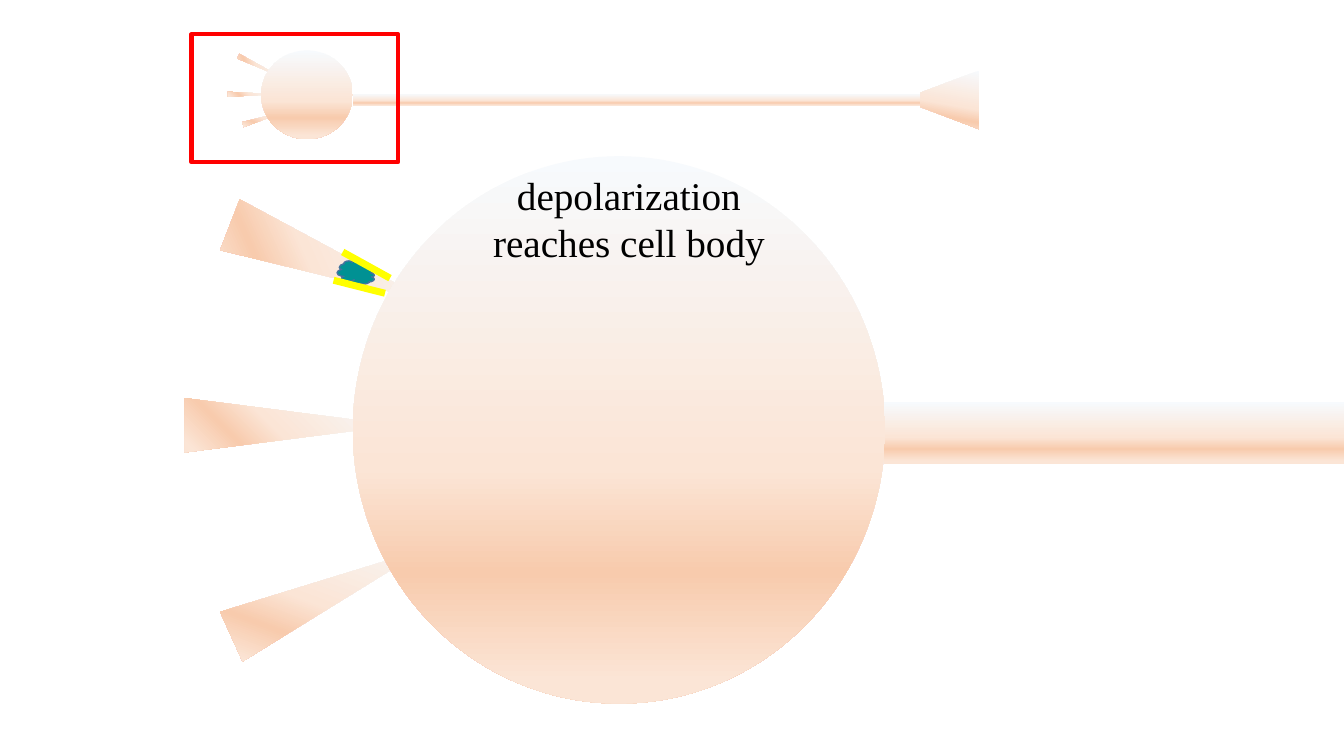
import pptx
import pptx.util
import pptx.dml.color
import pptx.enum.shapes
import pptx.enum.text
import pptx.oxml.ns
from lxml import etree

Pt = pptx.util.Pt
KIND = pptx.enum.shapes.MSO_SHAPE
qn = pptx.oxml.ns.qn

SIZE = 960, 540
LABEL = ["depolarization", "reaches cell body"]
LABEL_BOX = 267.1, 118.8, 364.3, 74.9
LABEL_FONT = {"name": "Times New Roman", "size": Pt(28)}
STOPS = [(0, "F7FAFD"), (57, "FBE5D6"), (76, "F8CBAD"), (96, "FBE5D6")]

# Dendrites: left, top, turn
LARGE = 38.9, 152.6
LARGE_DENDRITES = [(216, 111.6, 111), (188.6, 227.5, 90), (215.3, 347, 65.6)]
SMALL = 3.6, 35.3
SMALL_DENDRITES = [(184.3, 30.2, 116), (178.6, 49.7, 90), (188.6, 66.2, 73)]

LARGE_AXON = 607, 287.3, 353, 43.9
SMALL_AXON = 252, 67, 406.1, 8.6
LARGE_BODY = 252, 111.6, 380.2, 391
SMALL_BODY = 186.5, 36, 65.5, 63.4
TERMINAL = 657.4, 50.4, 41.8, 41.8
FRAME = 136.8, 24.5, 147.6, 91.4
CHANNEL = 245.5, 181.4, 17.3, 26.6
WALLS = [(244.8, 180, 278.6, 198.7), (238.3, 200.2, 275, 209.5)]


def color(code):
    return pptx.dml.color.RGBColor.from_string(code)


def stroke(line, code, width):
    line.color.rgb = color(code)
    line.width = Pt(width)


def add(kind, box, turn=0):
    shape = slide.shapes.add_shape(kind, *map(Pt, box))
    shape.shadow.inherit = False
    shape.rotation = turn
    return shape


def shade(shape, angle=90):
    """Give a borderless peach gradient; angle runs clockwise."""
    shape.line.fill.background()
    shape.fill.gradient()
    shape.fill.gradient_angle = 360 - angle
    stops = shape._element.spPr.find(qn("a:gradFill")).find(qn("a:gsLst"))
    for old in list(stops):
        stops.remove(old)
    for pos, code in STOPS:
        stop = etree.SubElement(stops, qn("a:gs"), pos=str(pos * 1000))
        etree.SubElement(stop, qn("a:srgbClr"), val=code)


def add_dendrites(spots, size):
    for left, top, turn in spots:
        shade(add(KIND.ISOSCELES_TRIANGLE, (left, top, *size), turn), 45)


deck = pptx.Presentation()
deck.slide_width, deck.slide_height = map(Pt, SIZE)
slide = deck.slides.add_slide(deck.slide_layouts[6])

shade(add(KIND.RECTANGLE, LARGE_AXON))
add_dendrites(LARGE_DENDRITES, LARGE)
add_dendrites(SMALL_DENDRITES, SMALL)
shade(add(KIND.OVAL, SMALL_BODY))
shade(add(KIND.RECTANGLE, SMALL_AXON))
end = add(KIND.TRAPEZOID, TERMINAL, 270)
end.adjustments[0] = 0.377
shade(end, 190)

frame = add(KIND.RECTANGLE, FRAME)
frame.fill.background()
stroke(frame.line, "FF0000", 3)

shade(add(KIND.OVAL, LARGE_BODY))

text = slide.shapes.add_textbox(*map(Pt, LABEL_BOX)).text_frame
text.word_wrap = True
text.text = "\n".join(LABEL)
for para in text.paragraphs:
    para.alignment = pptx.enum.text.PP_ALIGN.CENTER
    for run in para.runs:
        run.font.color.rgb = color("000000")
        for key, value in LABEL_FONT.items():
            setattr(run.font, key, value)

channel = add(KIND.CLOUD, CHANNEL, 90)
channel.fill.solid()
channel.fill.fore_color.rgb = color("009193")
stroke(channel.line, "43739E", 1)

for ends in WALLS:
    wall = slide.shapes.add_connector(
        pptx.enum.shapes.MSO_CONNECTOR.STRAIGHT, *map(Pt, ends))
    stroke(wall.line, "FFFF00", 5)
    etree.SubElement(wall._element.spPr, qn("a:effectLst"))

deck.save("out.pptx")
